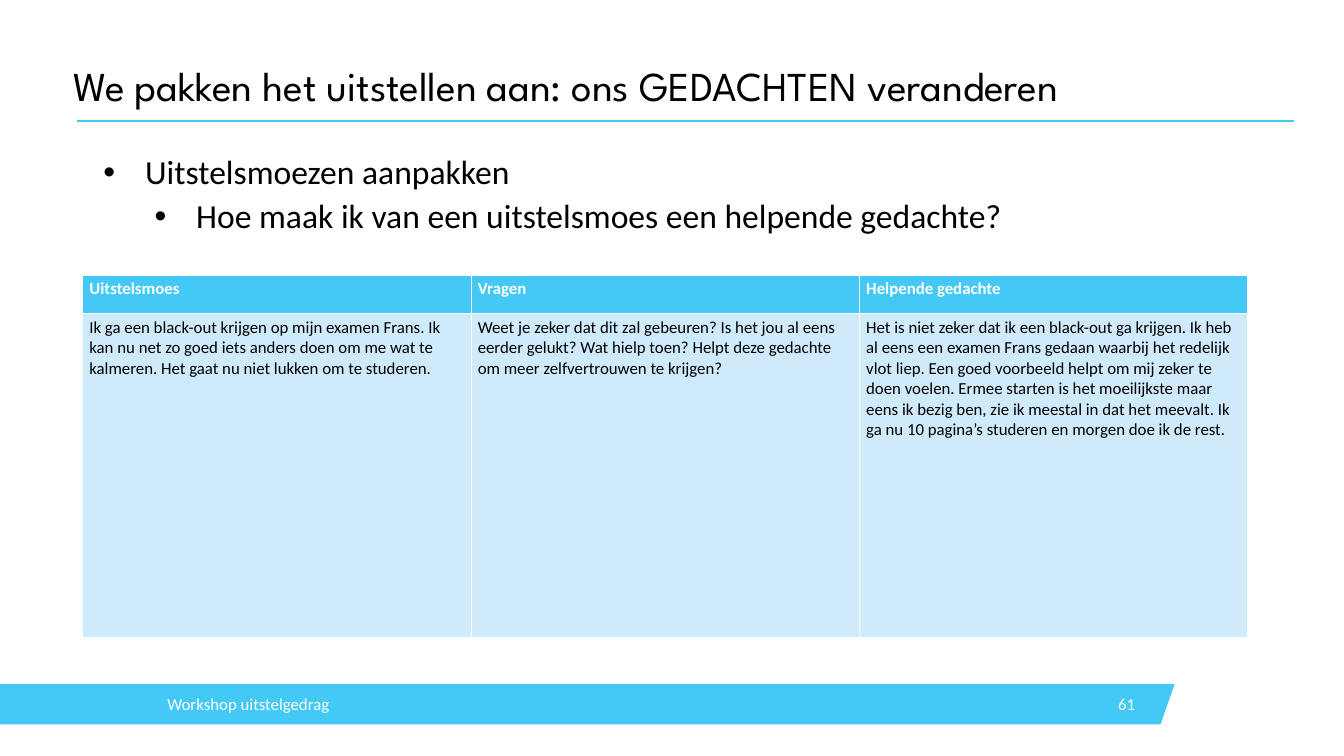
from lxml.etree import SubElement as add_element
from pptx import Presentation
from pptx.dml.color import RGBColor
from pptx.enum.shapes import MSO_CONNECTOR as Connector
from pptx.enum.text import MSO_ANCHOR as Anchor, MSO_AUTO_SIZE as AutoSize, PP_ALIGN as Align
from pptx.oxml.ns import qn
from pptx.util import Inches, Pt

SKY = RGBColor(0x44, 0xC8, 0xF5)
PALE = RGBColor(0xCF, 0xEB, 0xFB)
BLACK = RGBColor(0, 0, 0)
WHITE = RGBColor(0xFF, 0xFF, 0xFF)

COLUMNS, ROWS = 80, 45
BAR_TOP, BAR_HEIGHT = 40.72, 2.4
BULLETS = [
    (0, "Uitstelsmoezen aanpakken"),
    (1, "Hoe maak ik van een uitstelsmoes een helpende gedachte?"),
]
THOUGHTS = [
    ["Uitstelsmoes", "Vragen", "Helpende gedachte"],
    [
        "Ik ga een black-out krijgen op mijn examen Frans. Ik kan nu net zo goed iets "
        "anders doen om me wat te kalmeren. Het gaat nu niet lukken om te studeren.",
        "Weet je zeker dat dit zal gebeuren? Is het jou al eens eerder gelukt? Wat hielp "
        "toen? Helpt deze gedachte om meer zelfvertrouwen te krijgen?",
        "Het is niet zeker dat ik een black-out ga krijgen. Ik heb al eens een examen Frans "
        "gedaan waarbij het redelijk vlot liep. Een goed voorbeeld helpt om mij zeker te doen "
        "voelen. Ermee starten is het moeilijkste maar eens ik bezig ben, zie ik meestal in "
        "dat het meevalt. Ik ga nu 10 pagina’s studeren en morgen doe ik de rest.",
    ],
]


def write(para, text, font="Calibri", size=18, color=BLACK, bold=False, align=Align.LEFT):
    para.alignment = align
    span = para.add_run()
    span.text = text
    span.font.name = font
    span.font.size = Pt(size)
    span.font.bold = bold
    span.font.color.rgb = color


def add_bullet(para, indent, hanging):
    props = para._p.get_or_add_pPr()
    props.set("marL", str(Inches(indent)))
    props.set("indent", str(-Inches(hanging)))
    add_element(props, qn("a:buFont"), typeface="Arial")
    add_element(props, qn("a:buChar"), char="•")


def add_borders(cell, color=WHITE, width=1):
    props = cell._tc.get_or_add_tcPr()
    for side in ("lnL", "lnR", "lnT", "lnB"):
        line = add_element(props, qn(f"a:{side}"), w=str(Pt(width)))
        fill = add_element(line, qn("a:solidFill"))
        add_element(fill, qn("a:srgbClr"), val=str(color))


class Slide:
    """Places styled elements on a grid of COLUMNS by ROWS."""

    def __init__(self, deck):
        self.column = deck.slide_width / COLUMNS
        self.row = deck.slide_height / ROWS
        self.page = deck.slides.add_slide(deck.slide_layouts[1])

    def grid(self, *lengths):
        """Turn alternating columns and rows into slide lengths."""
        units = (self.column, self.row)
        return [round(length * units[i % 2]) for i, length in enumerate(lengths)]

    def move(self, box, *area):
        box.left, box.top, box.width, box.height = self.grid(*area)

    def title(self, text, *area):
        box = self.page.shapes.title
        self.move(box, *area)
        frame = box.text_frame
        frame.auto_size = AutoSize.NONE
        frame.vertical_anchor = Anchor.MIDDLE
        frame.margin_left = frame.margin_right = frame.margin_top = frame.margin_bottom = 0
        para = frame.paragraphs[0]
        para.line_spacing = 0.9
        write(para, text, font="League Spartan", size=44)

    def bullets(self, items, *area):
        box = self.page.placeholders[1]
        self.move(box, *area)
        frame = box.text_frame
        frame.auto_size = AutoSize.NONE
        for i, (level, text) in enumerate(items):
            para = frame.add_paragraph() if i else frame.paragraphs[0]
            add_bullet(para, indent=0.62 + 0.76 * level, hanging=0.62)
            para.level = level
            para.line_spacing = 0.9
            para.space_before = Pt(7.5 if i else 0)
            write(para, text, size=36)

    def rule(self, *ends):
        line = self.page.shapes.add_connector(Connector.STRAIGHT, *self.grid(*ends))
        line.line.color.rgb = SKY
        line.line.width = Pt(2.25)
        add_element(line._element.spPr, qn("a:effectLst"))

    def footer_bar(self, top, height, right, slant):
        corners = [(0, top), (right, top), (right - slant, top + height), (0, top + height)]
        start, *others = [self.grid(*corner) for corner in corners]
        builder = self.page.shapes.build_freeform(*start)
        builder.add_line_segments(others, close=True)
        bar = builder.convert_to_shape()
        bar.shadow.inherit = False
        bar.fill.solid()
        bar.fill.fore_color.rgb = SKY
        bar.line.fill.background()

    def footer_text(self, text, *area, margin=0.0, align=Align.LEFT):
        frame = self.page.shapes.add_textbox(*self.grid(*area)).text_frame
        frame.word_wrap = True
        frame.vertical_anchor = Anchor.MIDDLE
        frame.margin_left = frame.margin_right = Inches(margin)
        write(frame.paragraphs[0], text, color=WHITE, align=align)

    def table(self, rows, heights, left, top, width):
        area = self.grid(left, top, width, sum(heights))
        table = self.page.shapes.add_table(len(rows), len(rows[0]), *area).table
        for r, texts in enumerate(rows):
            table.rows[r].height = round(heights[r] * self.row)
            header = r == 0
            for c, text in enumerate(texts):
                cell = table.cell(r, c)
                add_borders(cell)
                cell.fill.solid()
                cell.fill.fore_color.rgb = SKY if header else PALE
                write(cell.text_frame.paragraphs[0], text,
                      color=WHITE if header else BLACK, bold=header)


def main():
    deck = Presentation()
    deck.slide_width, deck.slide_height = Inches(20), Inches(11.25)
    slide = Slide(deck)
    slide.footer_bar(BAR_TOP, BAR_HEIGHT, right=69.92, slant=0.84)
    slide.rule(4.56, 7.2, 77, 7.2)
    slide.title("We pakken het uitstellen aan: ons GEDACHTEN veranderen", 4.36, 3.88, 72.52, 2.76)
    slide.bullets(BULLETS, 5.76, 9.08, 65.2, 26.44)
    slide.footer_text("61", 63.6, BAR_TOP, 4.36, BAR_HEIGHT, margin=0.1, align=Align.RIGHT)
    slide.footer_text("Workshop uitstelgedrag", 9.96, BAR_TOP, 27, BAR_HEIGHT)
    slide.table(THOUGHTS, heights=[2.28, 19.24], left=4.92, top=16.4, width=69.36)
    deck.save("out.pptx")


if __name__ == "__main__":
    main()
